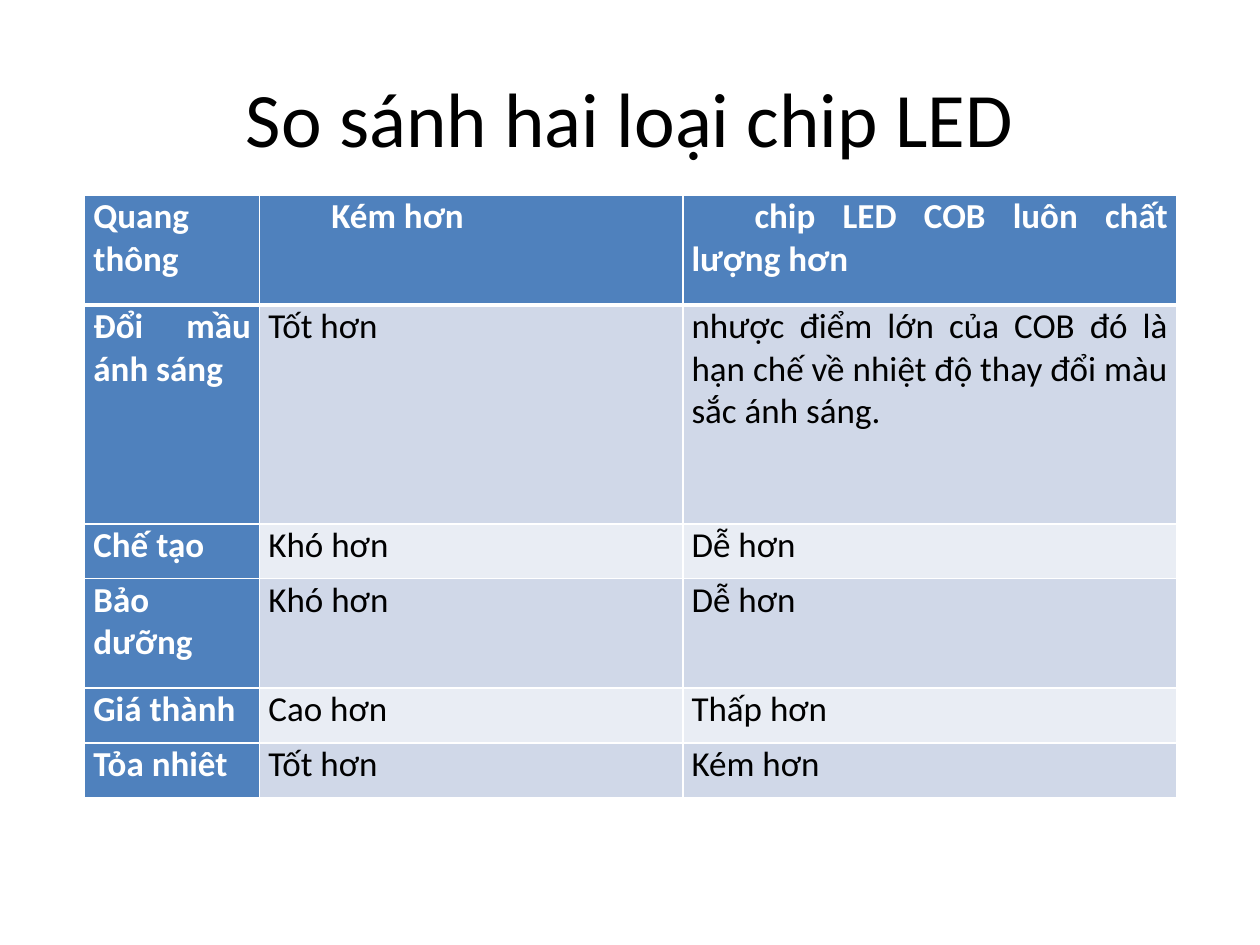
"""Build a slide with a table comparing two kinds of LED chip."""
from pptx import Presentation
from pptx.dml.color import RGBColor
from pptx.enum.text import MSO_ANCHOR, PP_ALIGN
from pptx.oxml import parse_xml
from pptx.oxml.ns import nsdecls
from pptx.util import Pt

BLACK = RGBColor(0x00, 0x00, 0x00)
WHITE = RGBColor(0xFF, 0xFF, 0xFF)
BLUE = RGBColor(0x4F, 0x81, 0xBD)
BAND_DARK = RGBColor(0xD0, 0xD8, 0xE8)
BAND_LIGHT = RGBColor(0xE9, 0xED, 0xF4)
FONT = "Calibri"

ROWS = [
    ("Quang thông", "Kém hơn", "chip LED COB luôn chất lượng hơn"),
    ("Đổi mầu ánh sáng", "Tốt hơn",
     "nhược điểm lớn của COB đó là hạn chế về nhiệt độ thay đổi màu sắc ánh sáng."),
    ("Chế tạo", "Khó hơn", "Dễ hơn"),
    ("Bảo dưỡng", "Khó hơn", "Dễ hơn"),
    ("Giá thành", "Cao hơn", "Thấp hơn"),
    ("Tỏa nhiêt", "Tốt hơn", "Kém hơn"),
]
COL_WIDTHS = [100, 241.8, 282.2]
ROW_UNITS = [2, 4, 1, 2, 1, 1]
UNIT = 31.3


def add_text(p, text, size, color, bold):
    r = p.add_run()
    r.text = text
    r.font.name = FONT
    r.font.size = Pt(size)
    r.font.bold = bold
    r.font.color.rgb = color


def add_border(cell, side, width):
    cell._tc.get_or_add_tcPr().append(parse_xml(
        f'<a:ln{side} {nsdecls("a")} w="{Pt(width)}"><a:solidFill>'
        f'<a:srgbClr val="{WHITE}"/></a:solidFill></a:ln{side}>'))


prs = Presentation()
prs.slide_width, prs.slide_height = Pt(720), Pt(540)
s = prs.slides.add_slide(prs.slide_layouts[5])

title = s.shapes.title
title.left, title.top, title.width, title.height = Pt(36), Pt(21.6), Pt(648), Pt(90)
title.text_frame.vertical_anchor = MSO_ANCHOR.MIDDLE
p = title.text_frame.paragraphs[0]
p.alignment = PP_ALIGN.CENTER
add_text(p, "So sánh hai loại chip LED", 44, BLACK, False)

table = s.shapes.add_table(
    len(ROWS), len(COL_WIDTHS), Pt(48.4), Pt(111.6),
    Pt(sum(COL_WIDTHS)), Pt(sum(ROW_UNITS) * UNIT)).table
table.first_col = True
for col, width in zip(table.columns, COL_WIDTHS):
    col.width = Pt(width)

for i, texts in enumerate(ROWS):
    table.rows[i].height = Pt(ROW_UNITS[i] * UNIT)
    for j, text in enumerate(texts):
        cell = table.cell(i, j)
        heading = i == 0 or j == 0
        cell.margin_left = cell.margin_right = Pt(5)
        cell.margin_top = cell.margin_bottom = Pt(0)
        for side in "LRTB":
            thick = (i, side) in ((0, "B"), (1, "T"))
            add_border(cell, side, 3 if thick else 1)
        cell.fill.solid()
        cell.fill.fore_color.rgb = BLUE if heading else BAND_DARK if i % 2 else BAND_LIGHT
        p = cell.text_frame.paragraphs[0]
        p.alignment = PP_ALIGN.JUSTIFY
        if i == 0 and j > 0:
            p._p.get_or_add_pPr().set("indent", str(Pt(36)))
        add_text(p, text, 20, WHITE if heading else BLACK, heading)

prs.save("out.pptx")
